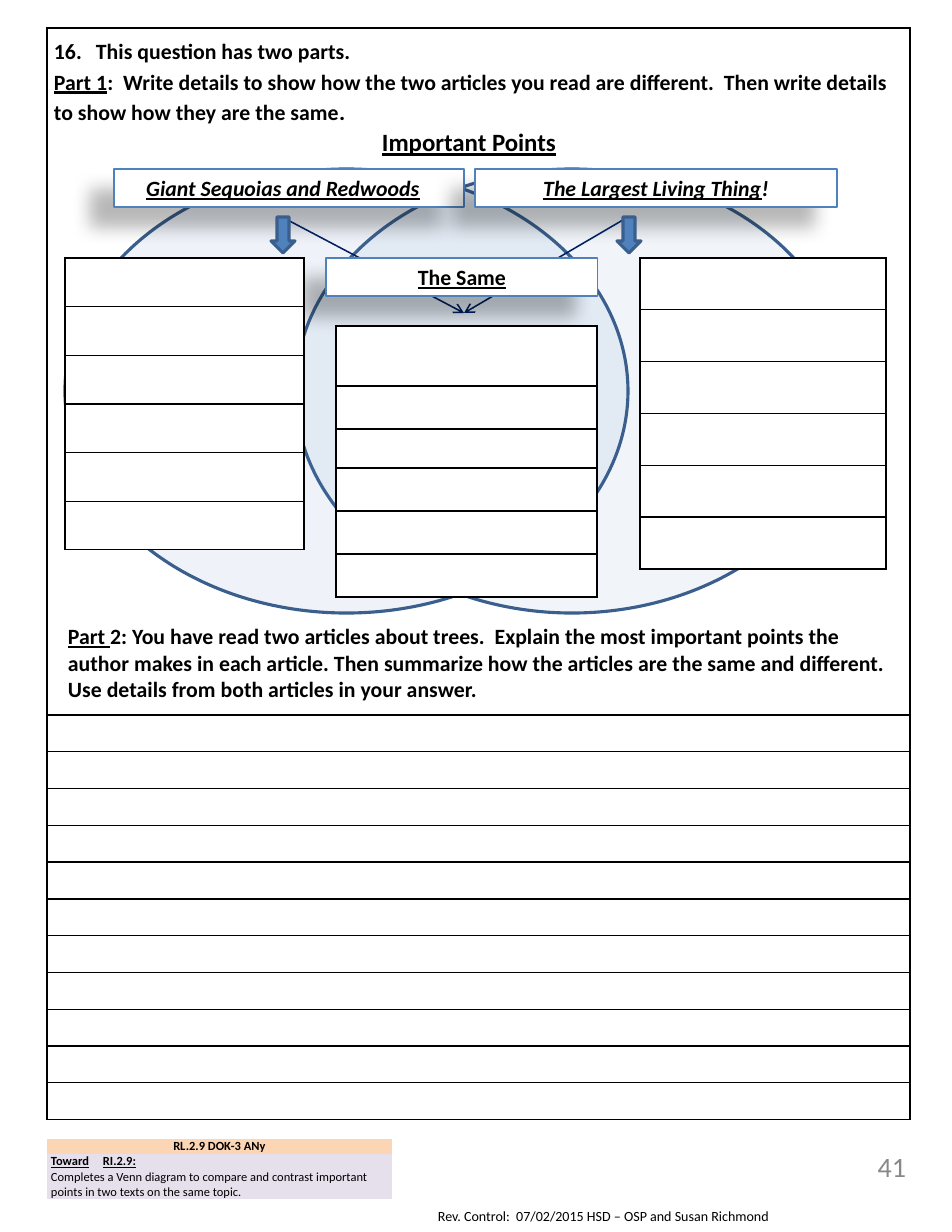
"""Builds the worksheet page comparing two articles with a Venn diagram."""
from lxml import etree
from pptx import Presentation
from pptx import util as u
from pptx.dml.color import RGBColor
from pptx.enum import shapes, text
from pptx.oxml import parse_xml
from pptx.oxml.ns import qn

PX = 914400 // 112
A = 'xmlns:a="http://schemas.openxmlformats.org/drawingml/2006/main"'
BLACK, WHITE, BLUE, EDGE, NAVY = "000000", "FFFFFF", "4F81BD", "3A5F8C", "002060"
CENTER, RIGHT = text.PP_ALIGN.CENTER, text.PP_ALIGN.RIGHT
MIDDLE = text.MSO_ANCHOR.MIDDLE
OVAL, RECT, DOWN = (shapes.MSO_SHAPE.OVAL, shapes.MSO_SHAPE.RECTANGLE,
                    shapes.MSO_SHAPE.DOWN_ARROW)

# Runs are (text, styles, font); styles are any of b, i, u.
QUESTION = [("This question has two parts.", "b")]
PART_1 = [("Part 1", "bu"),
          (":  Write details to show how the two articles you read are different.  "
           "Then write details to show how they are the same", "b"),
          (".", "b", "Roboto")]
PART_2 = [("Part ", "bu"),
          ("2: You have read two articles about trees.  Explain the most important points "
           "the author makes in each article. Then summarize how the articles are the same "
           "and different. Use details from both articles in your answer.", "b")]
CIRCLES = [((295, 169, 554, 444), 8), ((65, 169, 563, 444), 9)]
ARTICLES = [((114, 169, 350, 38), 23, [("Giant Sequoias and Redwoods", "biu")]),
            ((475, 169, 362, 38), 11, [("The Largest Living Thing", "biu"), ("!", "bi")])]
SAME = ((326, 258, 272, 38), 11, [("The Same", "bu")])
ARROW_LEFTS = [617, 271]
MEETING = (464, 313)
LINE_STARTS = [(282, 217), (628, 217)]
ANSWER_TABLES = [((65, 258, 239), [48.67] * 6),
                 ((336, 326, 261), [60, 43, 39, 43, 43, 43]),
                 ((640, 258, 246), [51.83] * 6)]
STANDARD = [("FCD5B5", 15, [[("RL.2.9 DOK-3 ANy", "b")]]),
            ("E6E0EC", 44, [[("Toward\tRI.2.9:", "bu")],
                            [("Completes a Venn diagram to compare and contrast important "
                              "points in two texts on the same topic.", "")]])]


def px(*lengths):
    return [round(length * PX) for length in lengths]


def color(value):
    return RGBColor.from_string(value)


def write(paragraph, runs, size, ink=BLACK, align=None):
    paragraph.alignment = align
    for words, styles, *font in runs:
        run = paragraph.add_run()
        run.text = words
        run.font.name = font[0] if font else "Calibri"
        run.font.size = u.Pt(size)
        run.font.color.rgb = color(ink)
        run.font.bold, run.font.italic, run.font.underline = (s in styles for s in "biu")


def set_margins(holder, left, top, right, bottom):
    (holder.margin_left, holder.margin_top,
     holder.margin_right, holder.margin_bottom) = px(left, top, right, bottom)


def add_text(slide, box, runs, size, margins=(11, 6, 11, 6), **style):
    frame = slide.shapes.add_textbox(*px(*box)).text_frame
    frame.word_wrap = True
    set_margins(frame, *margins)
    write(frame.paragraphs[0], runs, size, **style)
    return frame


def add_figure(slide, kind, box, fill, edge, width):
    figure = slide.shapes.add_shape(kind, *px(*box))
    figure.shadow.inherit = False
    figure.fill.solid()
    figure.fill.fore_color.rgb = color(fill)
    figure.line.color.rgb = color(edge)
    figure.line.width = u.Pt(width)
    return figure


def add_label(slide, box, right, runs):
    label = add_figure(slide, RECT, box, WHITE, BLUE, 0.75)
    effects = label._element.spPr.find(qn("a:effectLst"))
    effects.append(parse_xml(
        f'<a:outerShdw {A} blurRad="{u.Pt(11.8)}" dist="{u.Pt(19.7)}" dir="{141 * 60000}" '
        f'algn="tl" rotWithShape="0"><a:srgbClr val="{BLACK}"><a:alpha val="28000"/>'
        '</a:srgbClr></a:outerShdw>'))
    frame = label.text_frame
    frame.word_wrap = True
    frame.vertical_anchor = MIDDLE
    set_margins(frame, 11, 5, right, 5)
    write(frame.paragraphs[0], runs, 14, align=CENTER)


def add_arrow(slide, start, end):
    arrow = slide.shapes.add_connector(shapes.MSO_CONNECTOR.STRAIGHT, *px(*start, *end))
    arrow.line.color.rgb = color(NAVY)
    arrow.line.width = u.Pt(1)
    etree.SubElement(arrow.line._get_or_add_ln(), qn("a:tailEnd"), type="arrow")
    etree.SubElement(arrow._element.spPr, qn("a:effectLst"))


def add_table(slide, left, top, width, heights, fills, bordered=True):
    box = px(left, top, width, sum(heights))
    table = slide.shapes.add_table(len(heights), 1, *box).table
    table.first_row = table.horz_banding = False
    for row, height, fill in zip(table.rows, heights, fills):
        row.height = px(height)[0]
        cell = row.cells[0]
        set_margins(cell, 0, 0, 0, 0)
        properties = cell._tc.get_or_add_tcPr()
        for side in ("lnL", "lnR", "lnT", "lnB"):
            paint = (f'<a:solidFill><a:srgbClr val="{BLACK}"/></a:solidFill>'
                     if bordered else "<a:noFill/>")
            properties.append(parse_xml(f'<a:{side} {A} w="{u.Pt(1)}">{paint}</a:{side}>'))
        if fill:
            cell.fill.solid()
            cell.fill.fore_color.rgb = color(fill)
        else:
            cell.fill.background()
    return table


def add_worksheet(slide):
    heights = [687] + [36.82] * 11
    cell = add_table(slide, 47, 28, 863, heights, [None] * 12).cell(0, 0)
    set_margins(cell, 7, 7, 7, 7)
    frame = cell.text_frame
    question, part_1, part_2 = (frame.paragraphs[0], frame.add_paragraph(),
                                frame.add_paragraph())
    write(question, QUESTION, 14)
    write(part_1, PART_1, 14)
    write(part_2, PART_2, 14)
    question.line_spacing = part_1.line_spacing = 1.15
    part_2.space_before = u.Pt(320)
    numbering = question._p.get_or_add_pPr()
    numbering.set("marL", str(42 * PX))
    numbering.set("indent", str(-42 * PX))
    etree.SubElement(numbering, qn("a:buFont"), typeface="+mj-lt")
    etree.SubElement(numbering, qn("a:buAutoNum"), type="arabicPeriod", startAt="16")
    part_2._p.get_or_add_pPr().set("marL", str(14 * PX))


def add_diagram(slide):
    for box, opacity in CIRCLES:
        circle = add_figure(slide, OVAL, box, BLUE, EDGE, 2)
        tint = circle._element.spPr.find(qn("a:solidFill"))[0]
        etree.SubElement(tint, qn("a:alpha"), val=str(opacity * 1000))
    for article in ARTICLES:
        add_label(slide, *article)
    for start in LINE_STARTS:
        add_arrow(slide, start, MEETING)
    for left in ARROW_LEFTS:
        add_figure(slide, DOWN, (left, 217, 24, 36), BLUE, EDGE, 2)
    add_label(slide, *SAME)
    add_text(slide, (246, 121, 446, 41), [("Important Points", "bu")], 16, align=CENTER)
    for place, heights in ANSWER_TABLES:
        add_table(slide, *place, heights, [WHITE] * len(heights))


def add_standard(slide):
    fills, heights, contents = zip(*STANDARD)
    table = add_table(slide, 47, 1139, 345, heights, fills, bordered=False)
    for row, paragraphs in zip(table.rows, contents):
        cell = row.cells[0]
        set_margins(cell, 4, 0, 4, 0)
        frame = cell.text_frame
        for index, runs in enumerate(paragraphs):
            write(frame.add_paragraph() if index else frame.paragraphs[0], runs, 8)
    header, toward = (table.cell(row, 0).text_frame.paragraphs[0] for row in (0, 1))
    header.alignment = CENTER
    table.cell(0, 0).vertical_anchor = MIDDLE
    tabs = etree.SubElement(toward._p.get_or_add_pPr(), qn("a:tabLst"))
    etree.SubElement(tabs, qn("a:tab"), pos=str(52 * PX), algn="l")


def main():
    deck = Presentation()
    deck.slide_width, deck.slide_height = px(952, 1232)
    slide = deck.slides.add_slide(deck.slide_layouts[6])
    add_text(slide, (427, 1202, 476, 29),
             [("Rev. Control:  07/02/2015 HSD – OSP and Susan Richmond", "")], 9)
    number = add_text(slide, (803, 1148, 103, 37), [("41", "")], 18, (0, 0, 0, 0),
                      ink="888888", align=RIGHT)
    number.vertical_anchor = MIDDLE
    add_worksheet(slide)
    add_diagram(slide)
    add_standard(slide)
    deck.save("out.pptx")


if __name__ == "__main__":
    main()
